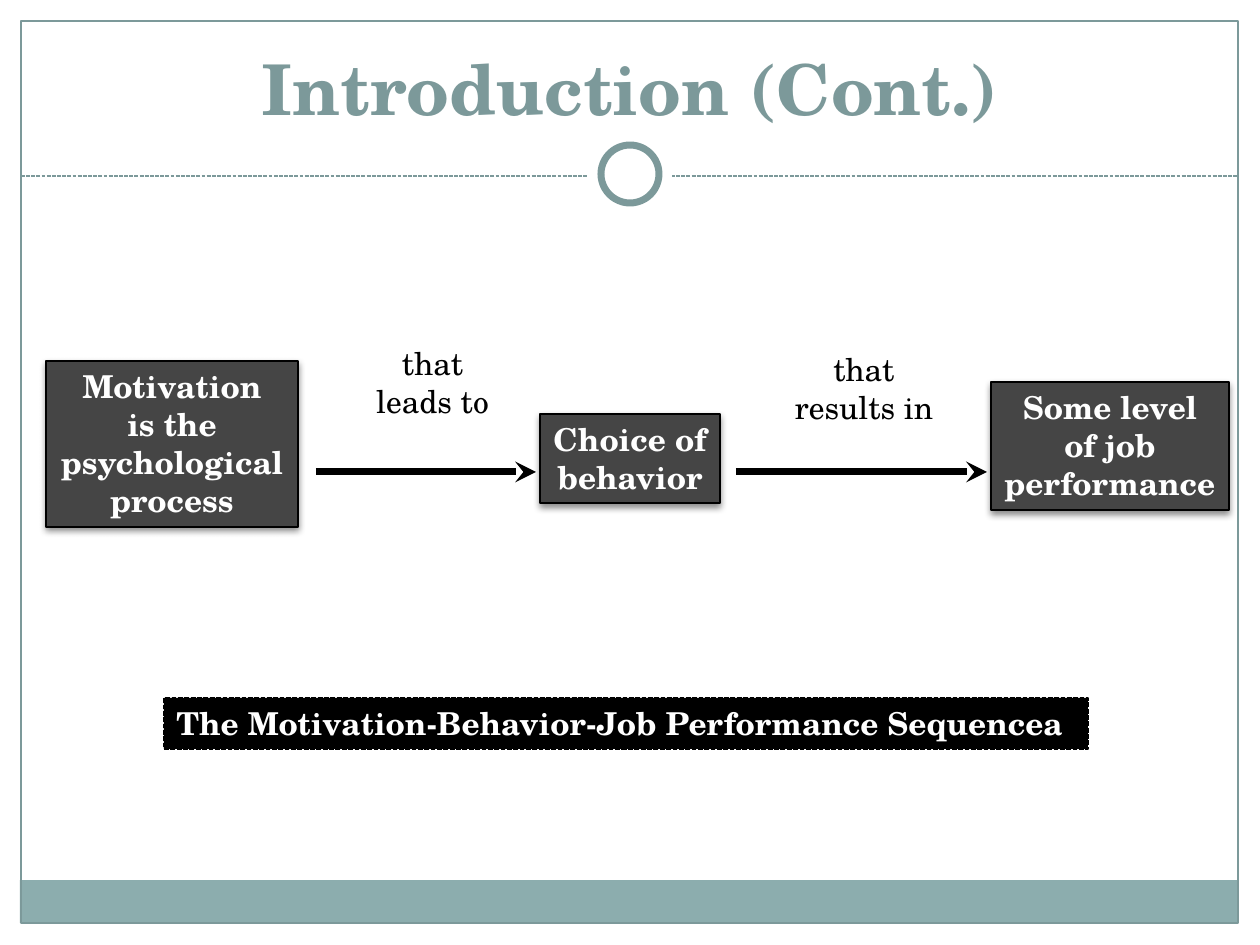
from dataclasses import dataclass

from lxml.etree import SubElement
from pptx import Presentation
from pptx.dml.color import RGBColor as Color
from pptx.enum.dml import MSO_LINE_DASH_STYLE as Dash
from pptx.enum.shapes import MSO_CONNECTOR as Connector, MSO_SHAPE as Preset
from pptx.enum.text import MSO_ANCHOR as Anchor, MSO_AUTO_SIZE as AutoSize, PP_ALIGN as Align
from pptx.oxml import parse_xml
from pptx.oxml.ns import nsdecls, qn
from pptx.util import Emu, Pt

EMU_PER_PX = 914400 / 126


@dataclass(frozen=True)
class Theme:
    font: str = "TeX Gyre Schola"
    title_size: int = 40
    text_size: int = 18
    accent: str = "7C999A"
    band: str = "8CADAE"
    box: str = "454545"
    dark: str = "000000"
    light: str = "FFFFFF"
    thin: float = 0.75
    thick: float = 4


THEME = Theme()


def px(*lengths):
    return [Emu(round(length * EMU_PER_PX)) for length in lengths]


def write(shape, text, color, size=THEME.text_size, bold=True,
          align=Align.CENTER, anchor=Anchor.TOP, wrap=False):
    frame = shape.text_frame
    frame.auto_size = AutoSize.NONE
    frame.word_wrap = wrap
    frame.vertical_anchor = anchor
    para = frame.paragraphs[0]
    para.text = text
    para.alignment = align
    font = para.font
    font.name, font.size, font.bold = THEME.font, Pt(size), bold
    font.color.rgb = Color.from_string(color)


def style_line(line, color, width, dash=None):
    line.color.rgb = Color.from_string(color)
    line.width = Pt(width)
    if dash:
        line.dash_style = dash


def add_block(page, area, fill=None, line=None, width=THEME.thin, dash=None,
              preset=Preset.RECTANGLE):
    shape = page.shapes.add_shape(preset, *px(*area))
    shape.shadow.inherit = False
    if fill:
        shape.fill.solid()
        shape.fill.fore_color.rgb = Color.from_string(fill)
    else:
        shape.fill.background()
    if line:
        style_line(shape.line, line, width, dash)
    else:
        shape.line.fill.background()
    return shape


def add_line(page, start, end, y, color, width, dash=None, arrow=False):
    rule = page.shapes.add_connector(Connector.STRAIGHT, *px(start, y, end, y))
    style_line(rule.line, color, width, dash)
    if arrow:
        SubElement(rule.line._get_or_add_ln(), qn("a:tailEnd"), type="stealth")
    SubElement(rule._element.spPr, qn("a:effectLst"))


def add_step(page, area, text):
    box = add_block(page, area, THEME.box, THEME.dark)
    effects = box._element.spPr.find(qn("a:effectLst"))
    effects.append(parse_xml(
        f'<a:outerShdw {nsdecls("a")} blurRad="{Pt(4)}" dist="{Pt(2)}" dir="5400000" '
        f'rotWithShape="0"><a:srgbClr val="{THEME.dark}"><a:alpha val="45000"/>'
        '</a:srgbClr></a:outerShdw>'))
    write(box, text, THEME.light)


def add_label(page, area, text):
    write(page.shapes.add_textbox(*px(*area)), text, THEME.dark, bold=False)


def add_frame(page):
    add_block(page, (20, 880, 1218, 43), THEME.band)
    add_block(page, (21, 21, 1217, 902), line=THEME.accent)
    add_line(page, 21, 1238, 176, THEME.accent, THEME.thin, Dash.SQUARE_DOT)
    # White disc interrupts the dashed rule behind the ring
    add_block(page, (588, 132, 84, 84), THEME.light, preset=Preset.OVAL)
    add_block(page, (601, 145, 58, 58), THEME.light, THEME.accent, THEME.thick,
              preset=Preset.OVAL)


def add_title(page, text):
    title = page.shapes.title
    title.left, title.top, title.width, title.height = px(42, 31, 1176, 105)
    write(title, text, THEME.accent, THEME.title_size, anchor=Anchor.BOTTOM, wrap=True)


def main():
    deck = Presentation()
    deck.slide_width, deck.slide_height = px(1260, 945)
    page = deck.slides.add_slide(deck.slide_layouts[5])

    # Page frame and heading
    add_frame(page)
    add_title(page, "Introduction (Cont.)")

    # Steps of the sequence
    for area, text in (
        ((46, 361, 252, 166), "Motivation\nis the\npsychological\nprocess"),
        ((540, 414, 180, 89), "Choice of\nbehavior"),
        ((991, 382, 238, 128), "Some level\nof job\nperformance"),
    ):
        add_step(page, area, text)

    # Links between the steps
    for area, text, start, end in (
        ((355, 338, 155, 113), "that\nleads to", 316, 536),
        ((775, 344, 178, 113), "that\nresults in", 736, 987),
    ):
        add_label(page, area, text)
        add_line(page, start, end, 472, THEME.dark, THEME.thick, arrow=True)

    # Caption
    caption = add_block(page, (164, 698, 924, 51), THEME.dark, THEME.dark, 0.9,
                        Dash.SQUARE_DOT)
    write(caption, "The Motivation-Behavior-Job Performance Sequencea", THEME.light,
          align=Align.LEFT, wrap=True)

    deck.save("out.pptx")


if __name__ == "__main__":
    main()
